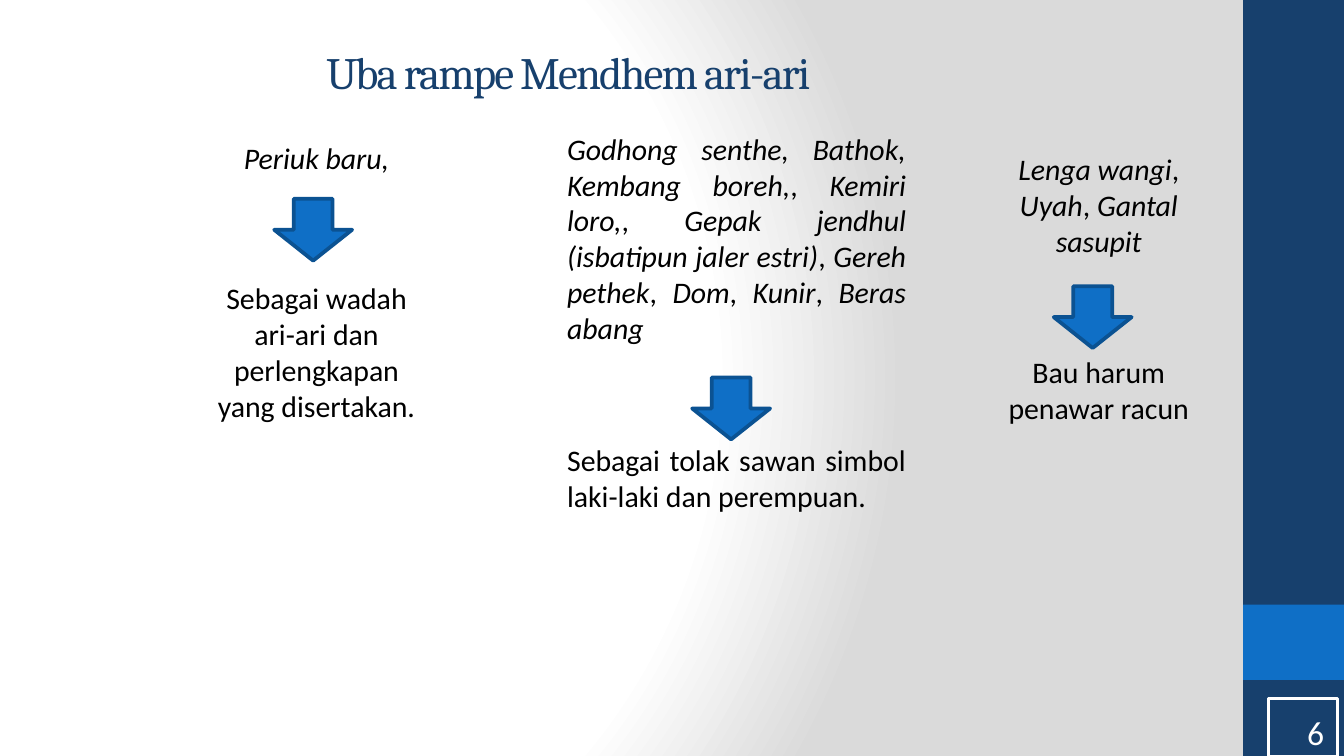
from lxml.etree import fromstring
from pptx import Presentation
from pptx.dml.color import RGBColor
from pptx.enum.shapes import MSO_SHAPE
from pptx.enum.text import MSO_ANCHOR, PP_ALIGN
from pptx.util import Inches, Pt

COLORS = {
    "navy": "17406D",
    "blue": "0F6FC6",
    "edge": "0B5292",
    "white": "FFFFFF",
    "gray": "DADADA",
    "black": "000000",
}
SPACES = (
    'xmlns:p="http://schemas.openxmlformats.org/presentationml/2006/main" '
    'xmlns:a="http://schemas.openxmlformats.org/drawingml/2006/main"'
)
WIDE = 10
HIGH = WIDE * 9 / 16


class Deck:
    font = "Calibri"
    size = 16
    inset = Inches(0.1)

    def __init__(self):
        self.show = Presentation()
        self.show.slide_width = Inches(WIDE)
        self.show.slide_height = Inches(HIGH)
        self.slide = self.show.slides.add_slide(self.show.slide_layouts[6])

    def color(self, name):
        return RGBColor.from_string(COLORS[name])

    def ground(self, stops):
        marks = "".join(
            f'<a:gs pos="{spot * 1000}"><a:srgbClr val="{COLORS[name]}"/></a:gs>'
            for spot, name in stops
        )
        back = fromstring(
            f'<p:bg {SPACES}><p:bgPr><a:gradFill rotWithShape="1"><a:gsLst>{marks}</a:gsLst>'
            '<a:path path="circle"><a:fillToRect l="20000" t="50000" r="100000" b="50000"/>'
            '</a:path></a:gradFill><a:effectLst/></p:bgPr></p:bg>'
        )
        self.slide.element.cSld.insert(0, back)

    def shape(self, kind, box, fill=None, line=None, weight=1):
        shape = self.slide.shapes.add_shape(kind, *map(Inches, box))
        shape.shadow.inherit = False
        if fill:
            shape.fill.solid()
            shape.fill.fore_color.rgb = self.color(fill)
        else:
            shape.fill.background()
        if line:
            shape.line.color.rgb = self.color(line)
            shape.line.width = Pt(weight)
        else:
            shape.line.fill.background()
        return shape

    def arrow(self, left, top):
        self.shape(MSO_SHAPE.DOWN_ARROW, (left, top, 0.58, 0.46), "blue", "edge", 2)

    def frame(self, shape, anchor=MSO_ANCHOR.TOP):
        frame = shape.text_frame
        frame.word_wrap = True
        frame.vertical_anchor = anchor
        frame.margin_left = frame.margin_right = self.inset
        frame.margin_top = frame.margin_bottom = self.inset
        return frame

    def text(self, box, anchor=MSO_ANCHOR.TOP):
        return self.frame(self.slide.shapes.add_textbox(*map(Inches, box)), anchor)

    def style(self, run, size=None, color="black", font=None, slant=False):
        run.font.name = font or self.font
        run.font.size = Pt(size or self.size)
        run.font.color.rgb = self.color(color)
        run.font.italic = slant

    def title(self, box, words):
        frame = self.text(box, MSO_ANCHOR.BOTTOM)
        frame.text = words
        run = frame.paragraphs[0].runs[0]
        self.style(run, 24, "navy", "Cambria")
        run.font._element.set("spc", "-100")

    def column(self, box, items, use, align, gap):
        frame = self.text(box)
        frame.margin_left = Inches(0.25)
        first = frame.paragraphs[0]
        for index, item in enumerate(items):
            if index:
                comma = first.add_run()
                comma.text = ", "
                self.style(comma)
            run = first.add_run()
            run.text = item
            self.style(run, slant=True)
        last = frame.add_paragraph()
        last.text = use
        last.space_before = Pt(gap)
        self.style(last.runs[0])
        for para in frame.paragraphs:
            para.alignment = align

    def number(self, box, value):
        frame = self.frame(self.shape(MSO_SHAPE.RECTANGLE, box, line="white", weight=1.5))
        frame.text = value
        frame.paragraphs[0].alignment = PP_ALIGN.RIGHT
        self.style(frame.paragraphs[0].runs[0], 18, "white")


def main():
    deck = Deck()
    deck.ground([(0, "white"), (75, "white"), (100, "gray")])
    deck.shape(MSO_SHAPE.RECTANGLE, (9.25, 0, 0.75, HIGH), "navy")
    deck.shape(MSO_SHAPE.RECTANGLE, (9.25, 4.5, 0.75, 0.56), "blue")
    deck.title((2.33, 0.13, 5.77, 0.7), "Uba rampe Mendhem ari-ari")

    columns = [
        ((1.35, 0.94, 1.86, 2.23), ["Periuk baru,"],
         "Sebagai wadah ari-ari dan perlengkapan yang disertakan.",
         PP_ALIGN.CENTER, 56),
        ((3.97, 0.87, 2.87, 3.69),
         ["Godhong senthe, Bathok, Kembang boreh,", "Kemiri loro,",
          "Gepak jendhul (isbatipun jaler estri)", "Gereh pethek",
          "Dom", "Kunir", "Beras abang"],
         "Sebagai tolak sawan simbol laki-laki dan perempuan.",
         PP_ALIGN.JUSTIFY, 51.5),
        ((7.17, 1.02, 1.86, 3.69), ["Lenga wangi", "Uyah", "Gantal sasupit"],
         "Bau harum penawar racun", PP_ALIGN.CENTER, 51.5),
    ]
    for column in columns:
        deck.column(*column)

    deck.number((9.44, 5.2, 0.51, 0.43), "6")
    for left, top in [(2.04, 1.48), (5.15, 2.81), (7.84, 2.13)]:
        deck.arrow(left, top)
    deck.show.save("out.pptx")


if __name__ == "__main__":
    main()
